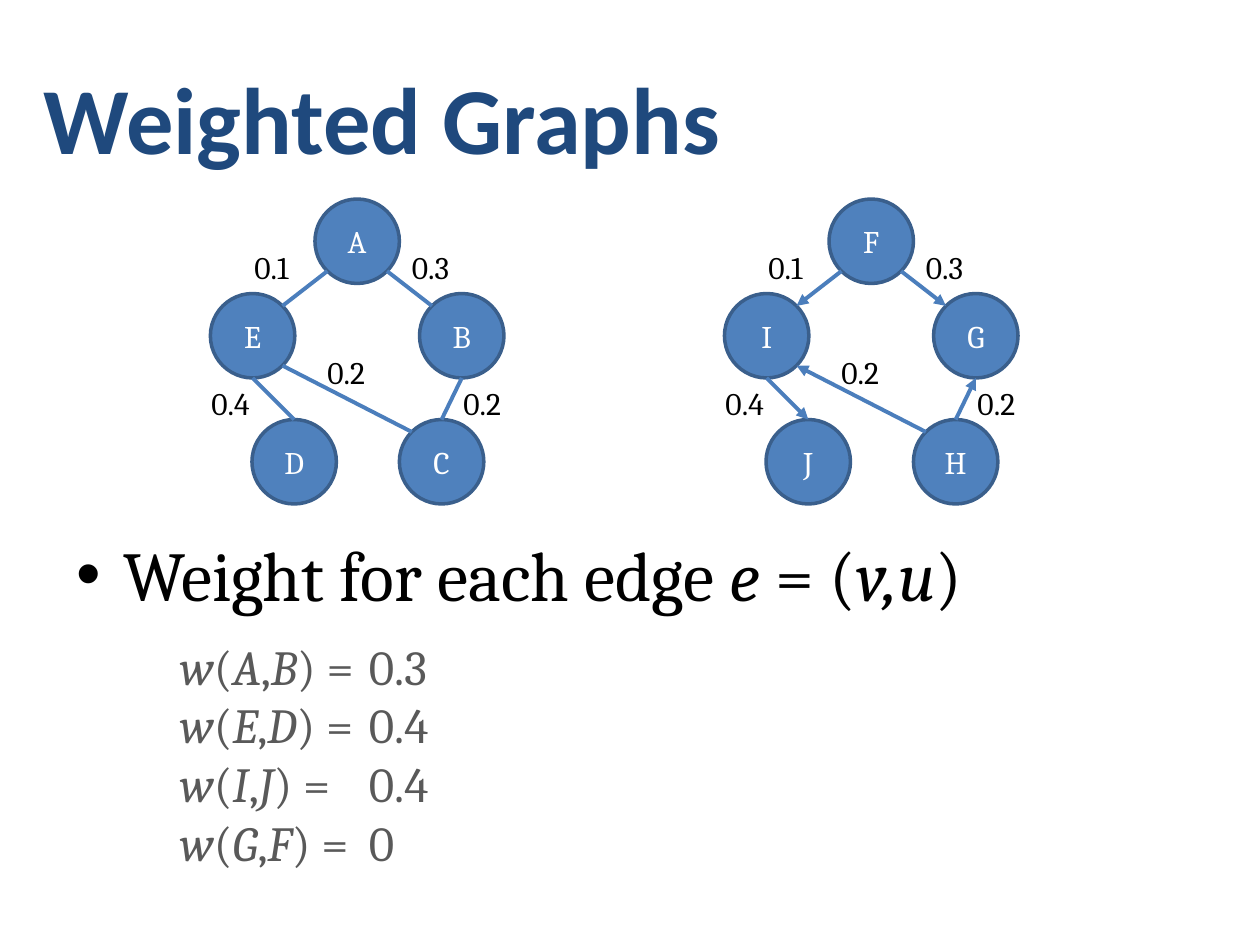
import math
import pptx
import pptx.util
import pptx.dml.color
import pptx.enum.shapes
import pptx.enum.text
import pptx.oxml.ns
from lxml import etree

Inches = pptx.util.Inches
Pt = pptx.util.Pt
qn = pptx.oxml.ns.qn
ANCHOR = pptx.enum.text.MSO_ANCHOR
ALIGN = pptx.enum.text.PP_ALIGN

DIAMETER = 0.67
GRAPH_SHIFT = 4.08
NODE_PLACES = [(2.5, 1.58), (3.33, 2.33), (3.17, 3.33), (2, 3.33), (1.67, 2.33)]
TOP, BOTTOM = 270, 90
UPPER_LEFT, UPPER_RIGHT, LOWER_RIGHT, LOWER_LEFT = 225, 315, 45, 135
EDGES = [
    (4, UPPER_RIGHT, 0, LOWER_LEFT),
    (1, UPPER_LEFT, 0, LOWER_RIGHT),
    (1, BOTTOM, 2, TOP),
    (4, LOWER_RIGHT, 2, UPPER_LEFT),
    (3, TOP, 4, BOTTOM),
]
WEIGHTS = [("0.1", 1.92, 1.92), ("0.3", 3.17, 1.92), ("0.2", 3.58, 3),
           ("0.4", 1.58, 3), ("0.2", 2.5, 2.75)]
EXAMPLES = [("A", "B", "0.3"), ("E", "D", "0.4"), ("I", "J", "0.4"), ("G", "F", "0")]


def rgb(color):
    return pptx.dml.color.RGBColor.from_string(color)


def add_run(p, text, size, color, font="Cambria", bold=False, italic=False):
    r = p.add_run()
    r.text = text
    r.font.size = Pt(size)
    r.font.name = font
    r.font.color.rgb = rgb(color)
    r.font.bold = bold
    r.font.italic = italic


def add_alternating(p, texts, size, color, italic):
    for text in texts:
        add_run(p, text, size, color, italic=italic)
        italic = not italic


def add_text_frame(s, x, y, w, h, wrap=True):
    sp = s.shapes.add_textbox(Inches(x), Inches(y), Inches(w), Inches(h))
    tf = sp.text_frame
    tf.word_wrap = wrap
    return tf


def next_paragraph(tf, index):
    return tf.add_paragraph() if index else tf.paragraphs[0]


def add_bullet(p, left, hanging):
    pPr = p._p.get_or_add_pPr()
    pPr.set("marL", str(Inches(left)))
    pPr.set("indent", str(-Inches(hanging)))
    color = etree.SubElement(pPr, qn("a:buClr"))
    etree.SubElement(color, qn("a:srgbClr"), val="000000")
    etree.SubElement(pPr, qn("a:buFont"), typeface="Arial")
    etree.SubElement(pPr, qn("a:buChar"), char="•")


def add_node(s, name, x, y):
    sp = s.shapes.add_shape(pptx.enum.shapes.MSO_SHAPE.OVAL, Inches(x), Inches(y),
                            Inches(DIAMETER), Inches(DIAMETER))
    sp.shadow.inherit = False
    sp.fill.solid()
    sp.fill.fore_color.rgb = rgb("4F81BD")
    sp.line.color.rgb = rgb("3A5F8C")
    sp.line.width = Pt(2)
    tf = sp.text_frame
    tf.vertical_anchor = ANCHOR.MIDDLE
    p = tf.paragraphs[0]
    p.alignment = ALIGN.CENTER
    add_run(p, name, 18, "FFFFFF")


def rim_point(node, angle, dx):
    x, y = NODE_PLACES[node]
    radius = DIAMETER / 2
    turn = math.radians(angle)
    return (Inches(x + dx + radius + radius * math.cos(turn)),
            Inches(y + radius + radius * math.sin(turn)))


def add_edge(s, start, end, directed):
    line = s.shapes.add_connector(pptx.enum.shapes.MSO_CONNECTOR.STRAIGHT, *start, *end)
    line.line.color.rgb = rgb("4B7EBC")
    line.line.width = Pt(2.25)
    if directed:
        etree.SubElement(line.line._get_or_add_ln(), qn("a:headEnd"), type="triangle")
    etree.SubElement(line._element.spPr, qn("a:effectLst"))


def add_graph(s, names, dx, reversed_edges, directed):
    for name, (x, y) in zip(names, NODE_PLACES):
        add_node(s, name, x + dx, y)
    for edge in EDGES:
        a, a_angle, b, b_angle = edge
        start, end = rim_point(a, a_angle, dx), rim_point(b, b_angle, dx)
        if edge in reversed_edges:
            start, end = end, start
        add_edge(s, start, end, directed)
    for weight, x, y in WEIGHTS:
        tf = add_text_frame(s, x + dx, y, 0.54, 0.4, wrap=False)
        add_run(tf.paragraphs[0], weight, 18, "000000")


def add_title(s):
    tf = add_text_frame(s, 0.25, 0.3, 9.5, 1.25)
    tf.vertical_anchor = ANCHOR.MIDDLE
    add_run(tf.paragraphs[0], "Weighted Graphs", 54, "1F497D", "Calibri", bold=True)


def add_definition(s):
    p = add_text_frame(s, 0.5, 4.17, 9, 2.53).paragraphs[0]
    add_bullet(p, 0.38, 0.37)
    add_alternating(p, ["Weight for each edge ", "e ", "= (", "v,u", ")"],
                    40, "000000", italic=False)


def add_examples(s):
    formulas = add_text_frame(s, 1.33, 5, 7, 1.97)
    values = add_text_frame(s, 2.83, 5, 7, 1.97)
    for i, (v, u, weight) in enumerate(EXAMPLES):
        add_alternating(next_paragraph(formulas, i), ["w", "(", v, ",", u, ") ="],
                        28, "595959", italic=True)
        add_run(next_paragraph(values, i), weight, 28, "595959")


def main():
    prs = pptx.Presentation()
    prs.slide_width = Inches(10)
    prs.slide_height = Inches(7.5)
    s = prs.slides.add_slide(prs.slide_layouts[6])
    add_title(s)
    add_graph(s, "ABCDE", 0, [], directed=False)
    add_graph(s, "FGHJI", GRAPH_SHIFT, [], directed=True)
    add_definition(s)
    add_examples(s)
    prs.save("out.pptx")


if __name__ == "__main__":
    main()
